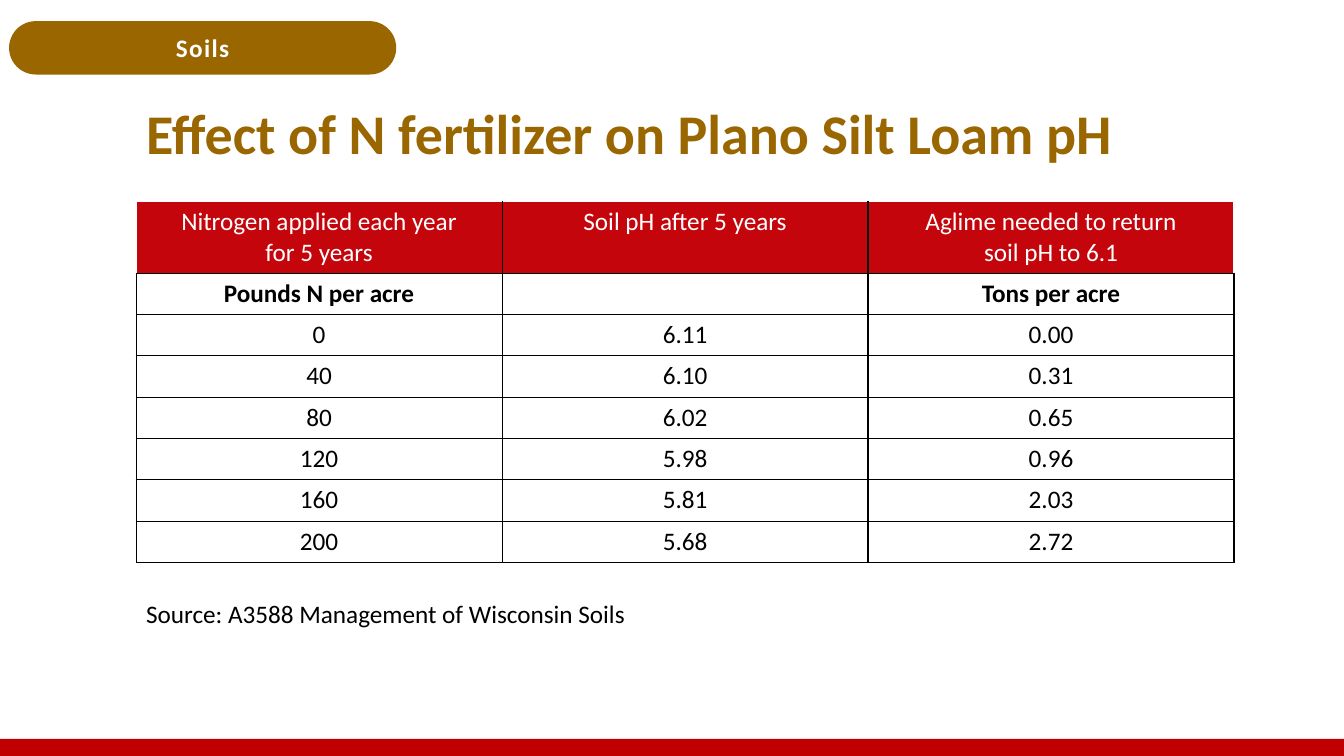
from lxml.etree import SubElement
from pptx import Presentation
from pptx.dml.color import RGBColor
from pptx.enum.shapes import MSO_SHAPE
from pptx.enum.text import MSO_ANCHOR, MSO_AUTO_SIZE, PP_ALIGN
from pptx.oxml.ns import qn
from pptx.util import Inches, Pt

HUES = {"brown": "996600", "bar": "C00000", "head": "C5050C",
        "white": "FFFFFF", "black": "000000"}
LEFT, WIDE = 1.35, 10.89
HEADS = [["Nitrogen applied each year", "for 5 years"],
         ["Soil pH after 5 years"],
         ["Aglime needed to return", "soil pH to 6.1"]]
UNITS = ["Pounds N per acre", "", "Tons per acre"]
DATA = [["0", "6.11", "0.00"], ["40", "6.10", "0.31"],
        ["80", "6.02", "0.65"], ["120", "5.98", "0.96"],
        ["160", "5.81", "2.03"], ["200", "5.68", "2.72"]]


def color(name):
    return RGBColor.from_string(HUES[name])


def write(para, text, hue, size=18, bold=False, align=PP_ALIGN.LEFT):
    para.alignment = align
    run = para.add_run()
    run.text = text
    font = run.font
    font.name, font.size, font.bold = "Calibri", Pt(size), bold
    font.color.rgb = color(hue)
    return run


def add_block(slide, kind, box, hue):
    block = slide.shapes.add_shape(kind, *map(Inches, box))
    block.shadow.inherit = False
    block.fill.solid()
    block.fill.fore_color.rgb = color(hue)
    block.line.fill.background()
    return block


def add_tag(slide, text):
    tag = add_block(slide, MSO_SHAPE.ROUNDED_RECTANGLE,
                    (0.09, 0.21, 3.84, 0.53), "brown")
    tag.adjustments[0] = 0.5
    frame = tag.text_frame
    frame.vertical_anchor = MSO_ANCHOR.MIDDLE
    run = write(frame.paragraphs[0], text, "white", bold=True,
                align=PP_ALIGN.CENTER)
    run.font._element.set("spc", "100")


def set_title(slide, text):
    title = slide.shapes.title
    title.left, title.top = Inches(LEFT), Inches(0.85)
    title.width, title.height = Inches(WIDE), Inches(1)
    frame = title.text_frame
    frame.auto_size = MSO_AUTO_SIZE.NONE
    frame.vertical_anchor = MSO_ANCHOR.MIDDLE
    para = frame.paragraphs[0]
    para.line_spacing = 0.9
    write(para, text, "brown", 40, True)


def set_edge(cell, side, hue):
    line = SubElement(cell._tc.get_or_add_tcPr(), qn(f"a:ln{side}"),
                      w=str(Pt(1)))
    fill = SubElement(line, qn("a:solidFill"))
    SubElement(fill, qn("a:srgbClr"), val=HUES[hue])


def fill_cell(cell, lines, hue, bold, pale, fill):
    for side in "LRTB":
        set_edge(cell, side, "white" if side in pale else "black")
    if fill:
        cell.fill.solid()
        cell.fill.fore_color.rgb = color(fill)
    else:
        cell.fill.background()
    frame = cell.text_frame
    for num, text in enumerate(lines):
        para = frame.add_paragraph() if num else frame.paragraphs[0]
        if text:
            write(para, text, hue, bold=bold, align=PP_ALIGN.CENTER)


def add_grid(slide):
    body = [UNITS] + DATA
    grid = slide.shapes.add_table(
        len(body) + 1, len(HEADS), Inches(LEFT), Inches(2),
        Inches(WIDE), Inches(3.54)).table
    for row in grid.rows:
        row.height = Inches(0.41)
    grid.rows[0].height = Inches(0.7)
    for col, lines in enumerate(HEADS):
        grid.columns[col].width = Inches(WIDE / len(HEADS))
        pale = ("LT", "T", "RT")[col]
        fill_cell(grid.cell(0, col), lines, "white", False, pale, "head")
    for num, row in enumerate(body, 1):
        for col, text in enumerate(row):
            fill_cell(grid.cell(num, col), [text], "black", num == 1, "", None)


def add_note(slide, text):
    box = slide.shapes.add_textbox(Inches(LEFT), Inches(5.89),
                                   Inches(5.71), Inches(0.4))
    box.text_frame.word_wrap = True
    box.text_frame.auto_size = MSO_AUTO_SIZE.SHAPE_TO_FIT_TEXT
    write(box.text_frame.paragraphs[0], text, "black")


def main():
    deck = Presentation()
    deck.slide_width, deck.slide_height = Inches(13.33), Inches(7.5)
    slide = deck.slides.add_slide(deck.slide_layouts[5])
    add_block(slide, MSO_SHAPE.RECTANGLE, (0, 7.33, 13.33, 0.17), "bar")
    add_tag(slide, "Soils")
    set_title(slide, "Effect of N fertilizer on Plano Silt Loam pH")
    add_grid(slide)
    add_note(slide, "Source: A3588 Management of Wisconsin Soils")
    deck.save("out.pptx")


if __name__ == "__main__":
    main()
